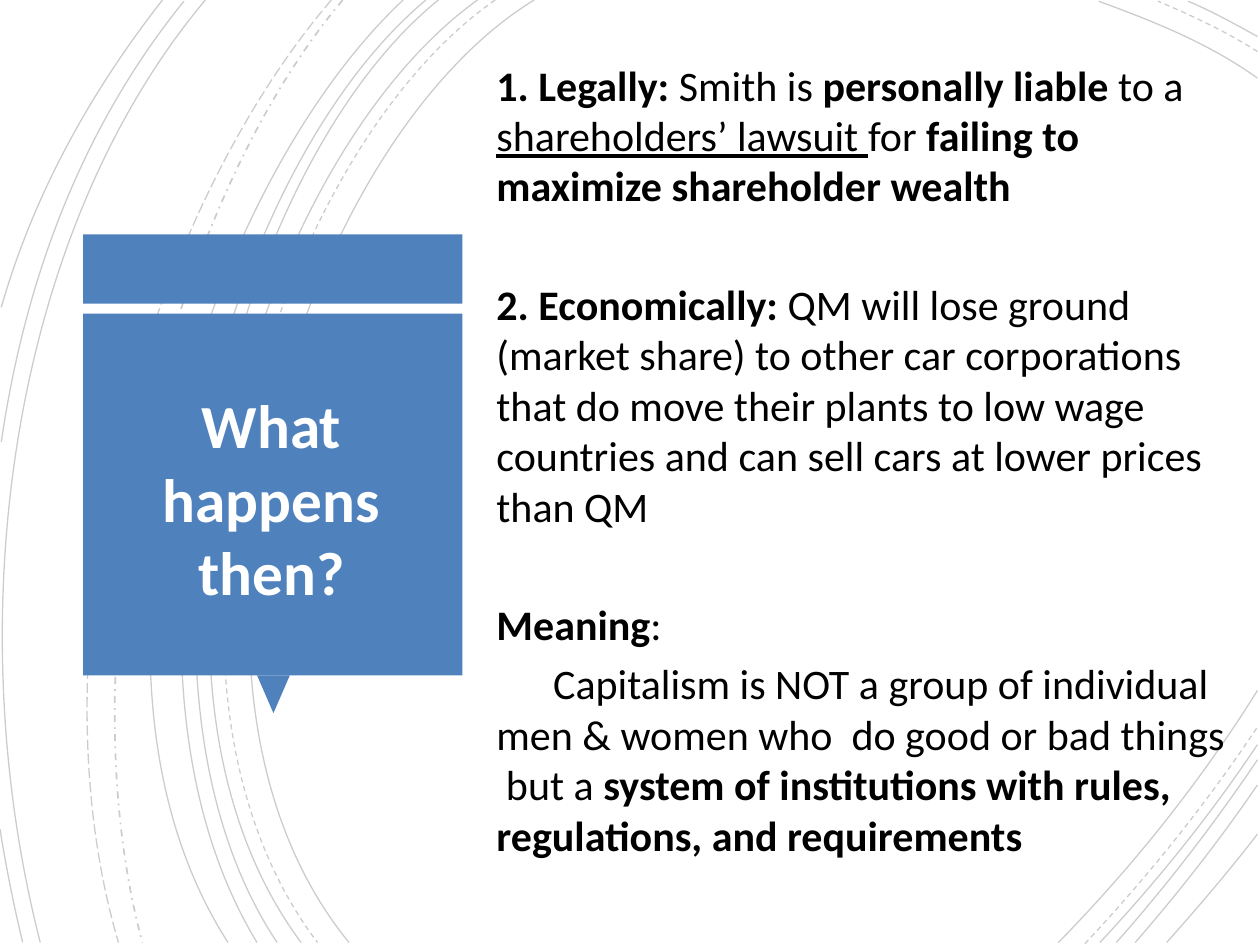
from lxml.etree import SubElement
from pptx import Presentation
from pptx.dml.color import RGBColor
from pptx.enum.dml import MSO_LINE_DASH_STYLE as DASH
from pptx.enum.shapes import MSO_SHAPE
from pptx.enum.text import MSO_ANCHOR, MSO_AUTO_SIZE, PP_ALIGN
from pptx.oxml.ns import qn
from pptx.util import Inches, Pt

BLACK = RGBColor(0, 0, 0)
WHITE = RGBColor(255, 255, 255)
BLUE = RGBColor(0x4F, 0x81, 0xBD)
FONT = "Calibri"

TITLE = "What happens then?"
LINE_GAP, SECTION_GAP = 5, 39

# Each paragraph: space before, first-line indent, runs of (text, style)
PARAGRAPHS = [
    (LINE_GAP, 0, [
        ("1. Legally: ", "bold"), ("Smith is ", ""), ("personally liable ", "bold"),
        ("to a ", ""), ("shareholders’ lawsuit ", "underline"), ("for", ""),
        (" failing to maximize shareholder wealth", "bold")]),
    (SECTION_GAP, 0, [
        ("2. Economically:", "bold"),
        (" QM will lose ground (market share) to other car corporations that do move "
         "their plants to low wage countries and can sell cars at lower prices than QM", "")]),
    (SECTION_GAP, 0, [("Meaning", "bold"), (":", "")]),
    (LINE_GAP, 0.45, [
        ("Capitalism is NOT a group of individual men & women who  do good or bad "
         "things  but a ", ""),
        ("system of institutions with rules, regulations, and requirements", "bold")]),
]

ARCS = {
    (DASH.SOLID, 0.75): [
        [(4.24, 0), (2.36, 1.15), (1.07, 5.4), (2.77, 7.48)],
        [(9.98, 0.62), (9.59, 0.34), (9.13, 0.16), (8.72, 0.01)],
        [(8.4, 7.48), (8.97, 6.9), (9.52, 6.22), (9.98, 5.48)],
        [(3.79, 0), (2.02, 1.27), (0.82, 5.37), (2.39, 7.48)],
        [(9.98, 0.29), (9.8, 0.19), (9.62, 0.09), (9.43, 0.01)],
        [(8.73, 7.48), (9.17, 7.01), (9.6, 6.48), (9.98, 5.91)],
        [(3.48, 0), (1.83, 1.33), (0.82, 5.41), (2.2, 7.48)],
        [(8.86, 7.48), (9.25, 7.04), (9.63, 6.55), (9.98, 6.03)],
        [(3.38, 0), (1.73, 1.38), (0.73, 5.33), (2.04, 7.48)],
        [(9.01, 7.48), (9.35, 7.09), (9.68, 6.67), (9.98, 6.23)],
        [(3.2, 0), (1.63, 1.47), (0.4, 5.29), (1.81, 7.48)],
        [(9.26, 7.48), (9.5, 7.21), (9.75, 6.92), (9.98, 6.62)],
        [(1.63, 0), (0.08, 1.85), (-0.34, 4.9), (0.32, 7.48)],
        [(1.46, 0.01), (0.69, 0.96), (0.21, 2.14), (0.01, 3.51)],
        [(0, 6.58), (0.05, 6.89), (0.11, 7.19), (0.18, 7.48)],
        [(1.29, 0), (0.75, 0.69), (0.28, 1.5), (0.01, 2.44)],
    ],
    (DASH.DASH, 0.75): [
        [(3.93, 0), (2.13, 1.25), (0.92, 5.37), (2.52, 7.48)],
        [(9.98, 0.41), (9.73, 0.25), (9.45, 0.12), (9.19, 0.01)],
        [(8.61, 7.49), (9.09, 6.98), (9.56, 6.4), (9.98, 5.77)],
    ],
    (DASH.DASH_DOT, 1): [[(2.72, 0), (1.32, 1.66), (0.49, 5.09), (1.13, 7.48)]],
    (DASH.LONG_DASH, 0.75): [[(2.63, 0), (1.18, 1.69), (0.21, 4.99), (0.94, 7.48)]],
}

CALLOUT = [
    (MSO_SHAPE.RECTANGLE, (0.66, 1.86, 3.01, 0.55), 0),
    (MSO_SHAPE.ISOSCELES_TRIANGLE, (2.04, 5.36, 0.26, 0.3), 180),
    (MSO_SHAPE.RECTANGLE, (0.66, 2.49, 3.01, 2.87), 0),
]


def add_arc(group, points, dash, width):
    start, *rest = [(Inches(x), Inches(y)) for x, y in points]
    builder = group.shapes.build_freeform(*start)
    builder.add_line_segments(rest, close=False)
    shape = builder.convert_to_shape()
    shape.shadow.inherit = False
    shape.fill.background()
    shape.line.color.rgb = BLACK
    shape.line.width = Pt(width)
    shape.line.dash_style = dash
    color = next(shape.line._ln.iter(qn("a:srgbClr")))
    SubElement(color, qn("a:alpha")).set("val", "20000")
    outline = next(shape._element.iter(qn("a:path")))
    curve = SubElement(outline, qn("a:cubicBezTo"))
    for segment in outline.findall(qn("a:lnTo")):
        curve.append(segment[0])
        outline.remove(segment)


def add_block(group, kind, box, rotation):
    shape = group.shapes.add_shape(kind, *map(Inches, box))
    shape.rotation = rotation
    shape.shadow.inherit = False
    shape.fill.solid()
    shape.fill.fore_color.rgb = BLUE
    shape.line.fill.background()


def place(placeholder, box):
    placeholder.left, placeholder.top, placeholder.width, placeholder.height = map(Inches, box)
    frame = placeholder.text_frame
    frame.word_wrap = True
    frame.auto_size = MSO_AUTO_SIZE.NONE
    frame.vertical_anchor = MSO_ANCHOR.MIDDLE
    element = placeholder._element
    element.getparent().append(element)
    return frame


def add_run(paragraph, text, size, color, style):
    run = paragraph.add_run()
    run.text = text
    font = run.font
    font.name, font.size, font.color.rgb = FONT, Pt(size), color
    font.bold = style == "bold"
    font.underline = style == "underline"


def main():
    presentation = Presentation()
    presentation.slide_width, presentation.slide_height = Inches(10), Inches(7.5)
    slide = presentation.slides.add_slide(presentation.slide_layouts[1])

    arcs = slide.shapes.add_group_shape()
    for (dash, width), curves in ARCS.items():
        for points in curves:
            add_arc(arcs, points, dash, width)

    callout = slide.shapes.add_group_shape()
    for block in CALLOUT:
        add_block(callout, *block)

    title, body = slide.placeholders
    paragraph = place(title, (0.74, 2.64, 2.83, 2.62)).paragraphs[0]
    paragraph.alignment = PP_ALIGN.CENTER
    add_run(paragraph, TITLE, 35, WHITE, "bold")

    frame = place(body, (3.84, -0.02, 5.99, 7.33))
    for index, (gap, indent, runs) in enumerate(PARAGRAPHS):
        paragraph = frame.add_paragraph() if index else frame.paragraphs[0]
        paragraph.space_before = Pt(gap)
        properties = paragraph._p.get_or_add_pPr()
        properties.set("marL", "0")
        properties.set("indent", str(Inches(indent)))
        SubElement(properties, qn("a:buNone"))
        for text, style in runs:
            add_run(paragraph, text, 24, BLACK, style)

    presentation.save("out.pptx")


if __name__ == "__main__":
    main()
